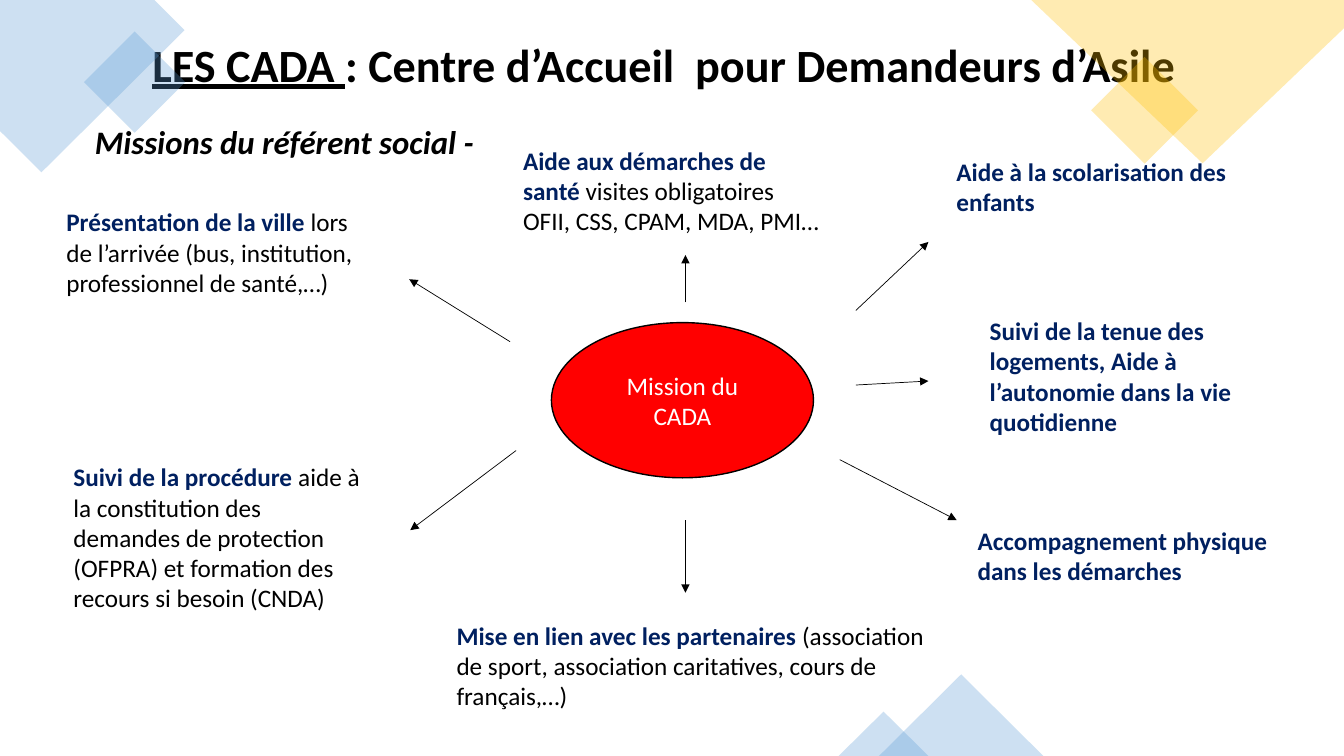
from dataclasses import dataclass

from lxml.etree import SubElement
from pptx import Presentation
from pptx.dml.color import RGBColor
from pptx.enum.shapes import MSO_CONNECTOR, MSO_SHAPE
from pptx.enum.text import MSO_ANCHOR, PP_ALIGN
from pptx.oxml.ns import qn
from pptx.util import Emu, Inches, Pt

COLORS = {"blue": "5B9BD5", "gold": "FFC000", "navy": "002060",
          "red": "FF0000", "black": "000000", "white": "FFFFFF"}
FONT = "Calibri"
BODY_SIZE = 18
MISSION_WIDTH = 23.55
# Heights in percent of the slide: one text line, and the box's own margins
LINE_HEIGHT, BOX_MARGINS = 4.0, 1.4

Point = tuple[float, float]  # percent of slide width, percent of slide height


@dataclass(frozen=True)
class Box:
    left: float
    top: float
    width: float
    height: float


@dataclass(frozen=True)
class Ornament:
    preset: MSO_SHAPE
    color: str
    box: Box
    rotation: float = 0


@dataclass(frozen=True)
class Corner:
    color: str
    outline: tuple[Point, ...]


@dataclass(frozen=True)
class Mission:
    heading: str
    detail: str
    corner: Point
    lines: int
    arrow_start: Point
    arrow_end: Point
    width: float = MISSION_WIDTH


CORNERS = (
    Corner("blue", ((0, 0), (11.48, 0), (13.73, 4), (3.08, 22.8), (0, 17.33))),
    Corner("gold", ((76.73, 0), (100, 0), (100, 3.73), (89.48, 21.6))),
)
ORNAMENTS = (
    Ornament(MSO_SHAPE.RECTANGLE, "blue", Box(7.35, 6.13, 5.33, 9.47), 45),
    Ornament(MSO_SHAPE.RECTANGLE, "gold", Box(82.35, 9.6, 5.63, 10), 45),
    Ornament(MSO_SHAPE.ISOSCELES_TRIANGLE, "blue", Box(65.4, 89.2, 12.23, 10.8)),
    Ornament(MSO_SHAPE.ISOSCELES_TRIANGLE, "blue", Box(62.4, 94.13, 6.68, 5.87)),
)
MISSIONS = (
    Mission("Présentation de la ville ",
            "lors de l’arrivée (bus, institution, professionnel de santé,…)",
            (4.2, 26.67), 3, (37.95, 45.2), (30.45, 36.93)),
    Mission("Suivi de la procédure ",
            "aide à la constitution des demandes de protection (OFPRA) "
            "et formation des recours si besoin (CNDA)",
            (4.73, 60.4), 6, (38.4, 59.6), (30.53, 70.13)),
    Mission("Aide aux démarches de santé ",
            "visites obligatoires OFII, CSS, CPAM, MDA, PMI…",
            (38.18, 18.53), 3, (51, 40), (51, 33.73)),
    Mission("Aide à la scolarisation des enfants", "",
            (70.43, 20), 2, (63.68, 41.07), (69.08, 32)),
    Mission("Suivi de la tenue des logements, Aide à l’autonomie "
            "dans la vie quotidienne", "",
            (72.9, 41.07), 4, (63.68, 50.93), (69.08, 50.4)),
    Mission("Accompagnement physique dans les démarches", "",
            (72, 68.8), 2, (62.48, 60.8), (71.18, 68.8)),
    Mission("Mise en lien avec les partenaires ",
            "(association de sport, association caritatives, "
            "cours de français,…)",
            (33.23, 81.33), 3, (51, 68.8), (51, 78.4), 37.2),
)

presentation = Presentation()
presentation.slide_width = Inches(13.33)
presentation.slide_height = Inches(7.5)
slide = presentation.slides.add_slide(presentation.slide_layouts[1])
shapes = slide.shapes


def across(share: float) -> Emu:
    return Emu(round(presentation.slide_width * share / 100))


def down(share: float) -> Emu:
    return Emu(round(presentation.slide_height * share / 100))


def frame(box: Box) -> tuple[Emu, Emu, Emu, Emu]:
    return across(box.left), down(box.top), across(box.width), down(box.height)


def place(placeholder, box: Box) -> None:
    (placeholder.left, placeholder.top,
     placeholder.width, placeholder.height) = frame(box)


def style(run, size: float, color: str = "black", bold: bool = False) -> None:
    run.font.name = FONT
    run.font.size = Pt(size)
    run.font.bold = bold
    run.font.color.rgb = RGBColor.from_string(COLORS[color])


def tint(shape, color: str) -> None:
    """Fill at 30 % opacity, without outline or shadow."""
    shape.shadow.inherit = False
    shape.line.fill.background()
    shape.fill.solid()
    shape.fill.fore_color.rgb = RGBColor.from_string(COLORS[color])
    hue = shape.fill._xPr.find(".//" + qn("a:srgbClr"))
    SubElement(hue, qn("a:alpha"), val="30000")


def draw_corner(corner: Corner) -> None:
    first, *others = [(across(x), down(y)) for x, y in corner.outline]
    builder = shapes.build_freeform(*first)
    builder.add_line_segments(others, close=True)
    tint(builder.convert_to_shape(), corner.color)


def draw_ornament(ornament: Ornament) -> None:
    shape = shapes.add_shape(ornament.preset, *frame(ornament.box))
    shape.rotation = ornament.rotation
    tint(shape, ornament.color)


def draw_arrow(start: Point, end: Point) -> None:
    arrow = shapes.add_connector(MSO_CONNECTOR.STRAIGHT, across(start[0]),
                                 down(start[1]), across(end[0]), down(end[1]))
    arrow.line.width = Pt(0.5)
    arrow.line.color.rgb = RGBColor.from_string(COLORS["black"])
    SubElement(arrow.line._get_or_add_ln(), qn("a:tailEnd"), type="triangle")
    SubElement(arrow._element.spPr, qn("a:effectLst"))


def draw_mission(mission: Mission) -> None:
    draw_arrow(mission.arrow_start, mission.arrow_end)
    height = mission.lines * LINE_HEIGHT + BOX_MARGINS
    label = shapes.add_textbox(*frame(Box(*mission.corner, mission.width, height)))
    label.text_frame.word_wrap = True
    paragraph = label.text_frame.paragraphs[0]
    paragraph.text = mission.heading
    style(paragraph.runs[0], BODY_SIZE, "navy", bold=True)
    if mission.detail:
        detail = paragraph.add_run()
        detail.text = mission.detail
        style(detail, BODY_SIZE)


# Coloured corners
for corner in CORNERS:
    draw_corner(corner)
for ornament in ORNAMENTS:
    draw_ornament(ornament)

# Title
title = shapes.title
place(title, Box(9.83, -0.67, 86.25, 19.33))
title_frame = title.text_frame
title_frame.vertical_anchor = MSO_ANCHOR.MIDDLE
title_frame.margin_left = Inches(0.2)
title_frame.margin_top, title_frame.margin_bottom = Inches(0.1), Inches(0.05)
heading = title_frame.paragraphs[0]
heading.text = "LES CADA "
heading.alignment = PP_ALIGN.LEFT
heading.line_spacing = 0.7
heading.add_run().text = ": Centre d’Accueil  pour Demandeurs d’Asile"
for run in heading.runs:
    style(run, 33, bold=True)
heading.runs[0].font.underline = True

# Subtitle
subtitle = slide.placeholders[1]
place(subtitle, Box(0, 16, 42.3, 7.33))
role = subtitle.text_frame.paragraphs[0]
role.text = "Missions du référent social -"
role.alignment = PP_ALIGN.CENTER
role.line_spacing = 0.9
role.space_before = Pt(0)
style(role.runs[0], 23.4, bold=True)
role.runs[0].font.italic = True
role_properties = role._p.get_or_add_pPr()
role_properties.set("marL", "0")
role_properties.set("indent", "0")
SubElement(role_properties, qn("a:buNone"))

# Central ellipse and the missions around it
center = shapes.add_shape(MSO_SHAPE.OVAL, *frame(Box(41.03, 42.67, 19.5, 20.53)))
center.shadow.inherit = False
center.fill.solid()
center.fill.fore_color.rgb = RGBColor.from_string(COLORS["red"])
center.line.color.rgb = RGBColor.from_string(COLORS["black"])
center.line.width = Pt(1)
center.text_frame.text = "Mission du CADA"
center.text_frame.vertical_anchor = MSO_ANCHOR.MIDDLE
center.text_frame.paragraphs[0].alignment = PP_ALIGN.CENTER
style(center.text_frame.paragraphs[0].runs[0], BODY_SIZE, "white")
for mission in MISSIONS:
    draw_mission(mission)

presentation.save("out.pptx")
